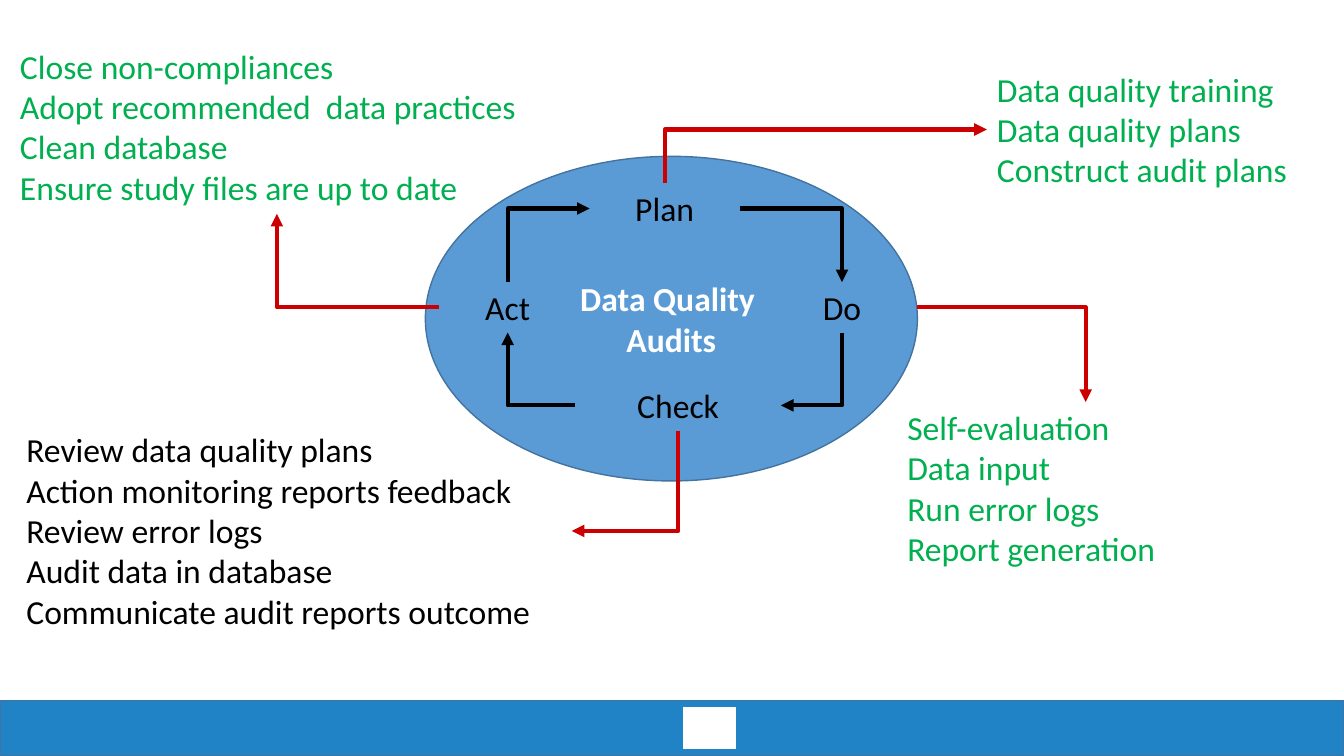
from dataclasses import dataclass
from lxml.etree import SubElement
from pptx import Presentation
from pptx.dml.color import RGBColor
from pptx.enum.shapes import MSO_CONNECTOR, MSO_SHAPE
from pptx.enum.text import MSO_ANCHOR, MSO_AUTO_SIZE, PP_ALIGN
from pptx.oxml.ns import qn
from pptx.util import Cm, Pt


@dataclass(frozen=True)
class Theme:
    font: str = "Calibri"
    size: int = 24
    black: str = "000000"
    white: str = "FFFFFF"
    green: str = "00B050"
    red: str = "CC0000"
    oval: str = "5B9BD5"
    edge: str = "43739E"
    band: str = "1F83C5"


THEME = Theme()
TOP, LEFT, BOTTOM, RIGHT = range(4)
WIDTH, HEIGHT = 33.87, 19.05

# Boxes are left, top, width, height in centimetres
OVAL = (10.72, 3.94, 12.4, 8.18)
BAND = (0, 17.65, WIDTH, 1.4)

# Labels inside the oval, relative to its corner
LABELS = {
    "Plan": (4.14, 0.68, 3.78, 1.27),
    "Do": (8.61, 3.17, 3.78, 1.27),
    "Check": (3.78, 5.64, 5.18, 1.27),
    "Act": (0.35, 3.17, 3.45, 1.27),
}
STEPS = [
    ("Plan", RIGHT, "Do", TOP),
    ("Do", BOTTOM, "Check", RIGHT),
    ("Check", LEFT, "Act", BOTTOM),
    ("Act", TOP, "Plan", LEFT),
]

# Task lists: step, side left, box, side reached, colour, lines
TASKS = [
    ("Plan", TOP, (24.87, 1.6, 7.92, 3.33), LEFT, THEME.green,
     ["Data quality training", "Data quality plans", "Construct audit plans"]),
    ("Act", LEFT, (0.25, 1.02, 13.46, 4.37), BOTTOM, THEME.green,
     ["Close non-compliances", "Adopt recommended  data practices",
      "Clean database", "Ensure study files are up to date"]),
    ("Check", BOTTOM, (0.41, 10.69, 14, 5.38), RIGHT, THEME.black,
     ["Review data quality plans", "Action monitoring reports feedback",
      "Review error logs", "Audit data in database",
      "Communicate audit reports outcome"]),
    ("Do", RIGHT, (22.61, 10.13, 9.5, 4.37), TOP, THEME.green,
     ["Self-evaluation", "Data input", "Run error logs",
      "Report generation"]),
]


def rgb(code):
    return RGBColor.from_string(code)


def place(shape, box):
    shape.left, shape.top, shape.width, shape.height = map(Cm, box)


def write(shape, lines, color=THEME.black, bold=False,
          align=PP_ALIGN.LEFT, anchor=MSO_ANCHOR.TOP):
    frame = shape.text_frame
    frame.word_wrap = True
    frame.auto_size = MSO_AUTO_SIZE.NONE
    frame.vertical_anchor = anchor
    frame.text = "\n".join(lines)
    for para in frame.paragraphs:
        props = para._p.get_or_add_pPr()
        props.set("marL", "0")
        props.set("indent", "0")
        SubElement(props, qn("a:buNone"))
        para.alignment = align
        para.space_before = Pt(0)
        font = para.font
        font.name, font.size, font.bold = THEME.font, Pt(THEME.size), bold
        font.color.rgb = rgb(color)


def block(slide, kind, box, fill, edge):
    shape = slide.shapes.add_shape(kind, *map(Cm, box))
    shape.shadow.inherit = False
    shape.fill.solid()
    shape.fill.fore_color.rgb = rgb(fill)
    shape.line.color.rgb = rgb(edge)
    shape.line.width = Pt(1)
    return shape


def middle(box, side):
    x, y, w, h = box
    return {TOP: (x + w / 2, y), LEFT: (x, y + h / 2),
            BOTTOM: (x + w / 2, y + h), RIGHT: (x + w, y + h / 2)}[side]


def bend(slide, start, side, end, goal, color):
    """Arrow with one corner from a side of one box to a side of another."""
    (x1, y1), (x2, y2) = middle(start, side), middle(end, goal)
    upright = side in (TOP, BOTTOM)
    if upright:  # lay the path flat about its centre, then turn it
        cx, cy = (x1 + x2) / 2, (y1 + y2) / 2
        dx, dy = (y2 - y1) / 2, (x1 - x2) / 2
        x1, y1, x2, y2 = cx - dx, cy - dy, cx + dx, cy + dy
    link = slide.shapes.add_connector(
        MSO_CONNECTOR.ELBOW, *map(Cm, (x1, y1, x2, y2)))
    link.line.color.rgb = rgb(color)
    link.line.width = Pt(3)
    props = link._element.spPr
    props.find(qn("a:prstGeom")).set("prst", "bentConnector2")
    if upright:
        props.find(qn("a:xfrm")).set("rot", "5400000")
    SubElement(props.find(qn("a:ln")), qn("a:tailEnd"), type="triangle")
    SubElement(props, qn("a:effectLst"))


def footer(slide, box):
    x, y, w, h = box
    block(slide, MSO_SHAPE.RECTANGLE, box, THEME.band, THEME.edge)
    block(slide, MSO_SHAPE.RECTANGLE, (x + 17.22, y + 0.18, 1.32, 1.04),
          THEME.white, THEME.white)


def cycle(slide, box):
    """Oval with the four steps; returns the boxes of the steps."""
    oval = block(slide, MSO_SHAPE.OVAL, box, THEME.oval, THEME.edge)
    write(oval, ["Data Quality ", "Audits"], color=THEME.white, bold=True,
          align=PP_ALIGN.CENTER, anchor=MSO_ANCHOR.MIDDLE)
    spots = {}
    for name, (x, y, w, h) in LABELS.items():
        spots[name] = (box[0] + x, box[1] + y, w, h)
        label = slide.shapes.add_textbox(*map(Cm, spots[name]))
        write(label, [name], align=PP_ALIGN.CENTER)
    for start, side, end, goal in STEPS:
        bend(slide, spots[start], side, spots[end], goal, THEME.black)
    return spots


def tasks(slide, holder, box, lines, color):
    place(holder, box)
    write(holder, lines, color=color)


def main():
    deck = Presentation()
    deck.slide_width, deck.slide_height = Cm(WIDTH), Cm(HEIGHT)
    # The comparison layout offers four body placeholders
    slide = deck.slides.add_slide(deck.slide_layouts[4])
    title = slide.shapes.title._element
    title.getparent().remove(title)
    holders = list(slide.placeholders)

    footer(slide, BAND)
    spots = cycle(slide, OVAL)
    for holder, (step, side, box, goal, color, lines) in zip(holders, TASKS):
        tasks(slide, holder, box, lines, color)
        bend(slide, spots[step], side, box, goal, THEME.red)
    deck.save("out.pptx")


if __name__ == "__main__":
    main()
